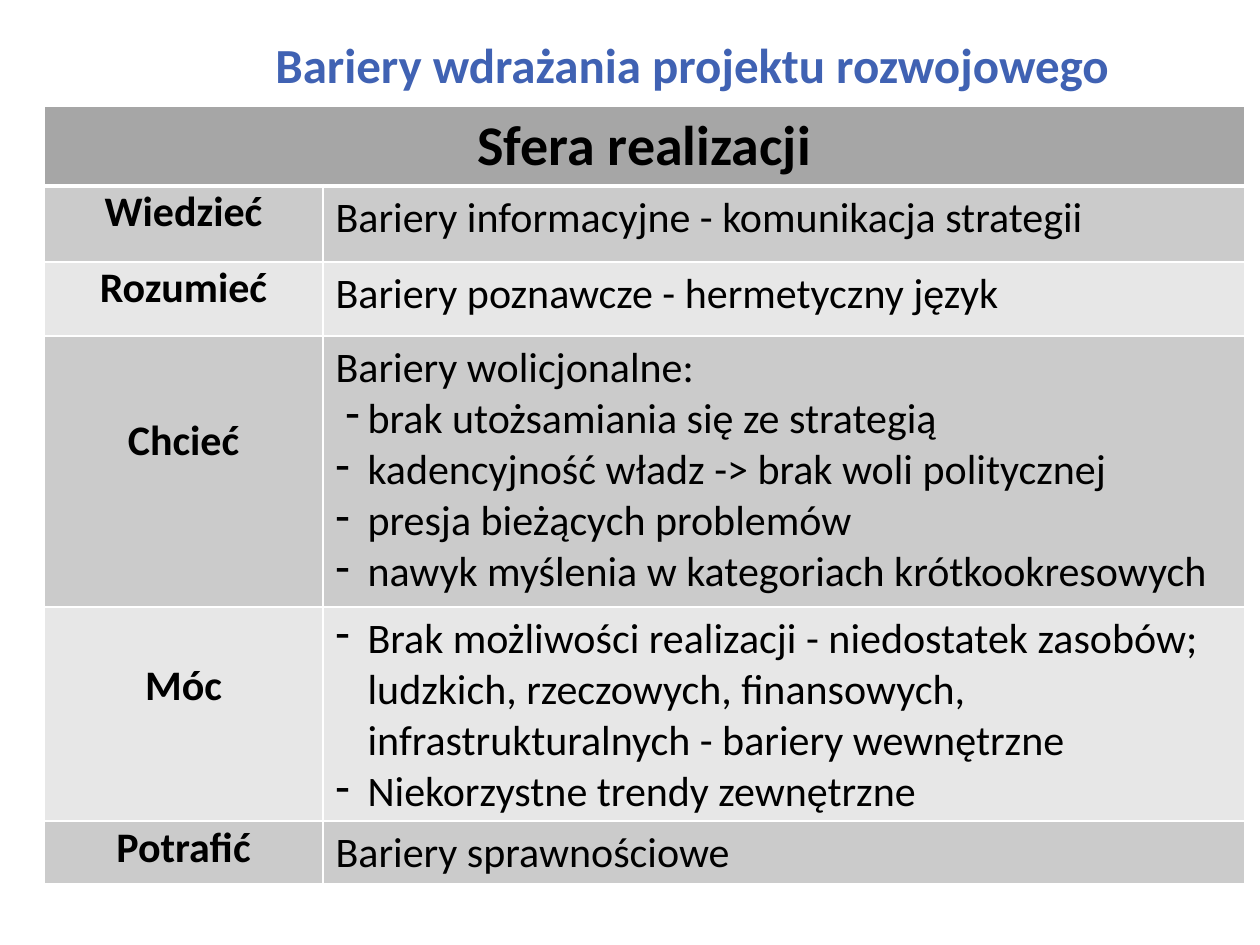
from pptx import Presentation
from pptx.dml.color import RGBColor
from pptx.enum.text import MSO_ANCHOR, PP_ALIGN
from pptx.oxml import parse_xml
from pptx.oxml.ns import nsdecls
from pptx.util import Emu, Pt

LABEL_LINE = 15  # points, fixed line pitch of the left column
HEADER_FILL, BAND_FILLS = "A6A6A6", ("CBCBCB", "E7E7E7")


def px(value):
    return Emu(round(value * 914400 / 126))


def color(value):
    return RGBColor.from_string(value)


def apply(target, values):
    for name, value in values.items():
        setattr(target, name, value)


class SlideBuilder:
    font = "Calibri"
    ink = "000000"
    grid = "FFFFFF"
    dash_indent = 32

    def __init__(self, slide):
        self.slide = slide

    def add_text(self, paragraph, text, size, bold=False, ink=None, **layout):
        apply(paragraph, layout)
        run = paragraph.add_run()
        run.text = text
        apply(run.font, dict(name=self.font, size=Pt(size), bold=bold))
        run.font.color.rgb = color(ink or self.ink)

    def dash(self, paragraph, first_offset):
        """Turn a paragraph into a dash item with a hanging indent."""
        props = paragraph._p.get_or_add_pPr()
        props.set("marL", str(px(self.dash_indent)))
        props.set("indent", str(px(first_offset - self.dash_indent)))
        props.append(parse_xml(f'<a:buChar {nsdecls("a")} char="-"/>'))

    def title(self, text, left, top, width, height):
        frame = self.slide.shapes.add_textbox(
            px(left), px(top), px(width), px(height)).text_frame
        apply(frame, dict(word_wrap=True, vertical_anchor=MSO_ANCHOR.TOP,
                          margin_top=px(9)))
        self.add_text(frame.paragraphs[0], text, 28, True, "4062B3")

    def table(self, left, top, columns, rows):
        table = self.slide.shapes.add_table(
            len(rows), len(columns), px(left), px(top),
            px(sum(columns)), px(sum(rows))).table
        table.horz_banding = False
        for column, width in zip(table.columns, columns):
            column.width = px(width)
        for row, height in zip(table.rows, rows):
            row.height = px(height)
        return table

    def style_cell(self, cell, fill, top=1, bottom=1):
        cell.fill.solid()
        cell.fill.fore_color.rgb = color(fill)
        props = cell._tc.get_or_add_tcPr()
        borders = dict(lnL=1, lnR=1, lnT=top, lnB=bottom)
        for place, (side, points) in enumerate(borders.items()):
            props.insert(place, parse_xml(
                f'<a:{side} {nsdecls("a")} w="{Pt(points)}"><a:solidFill>'
                f'<a:srgbClr val="{self.grid}"/></a:solidFill></a:{side}>'))

    def label(self, cell, text, lines_above):
        apply(cell, dict(margin_left=px(9), margin_right=px(9), margin_bottom=0,
                         margin_top=Pt(LABEL_LINE * lines_above)))
        self.add_text(cell.text_frame.paragraphs[0], text, 24, True,
                      alignment=PP_ALIGN.CENTER, line_spacing=Pt(LABEL_LINE))

    def barriers(self, cell, items):
        """Items are (text, dash offset); an offset of None means no dash."""
        frame = cell.text_frame
        for number, (text, offset) in enumerate(items):
            paragraph = frame.add_paragraph() if number else frame.paragraphs[0]
            if offset is not None:
                self.dash(paragraph, offset)
            self.add_text(paragraph, text, 24)


# Label, lines left free above it, barriers
SPHERES = [
    ("Wiedzieć", 1, [("Bariery informacyjne - komunikacja strategii", None)]),
    ("Rozumieć", 1, [("Bariery poznawcze - hermetyczny język", None)]),
    ("Chcieć", 4, [
        ("Bariery wolicjonalne:", None),
        ("brak utożsamiania się ze strategią", 10),
        ("kadencyjność władz -> brak woli politycznej", 0),
        ("presja bieżących problemów", 0),
        ("nawyk myślenia w kategoriach krótkookresowych", 0),
    ]),
    ("Móc", 3, [
        ("Brak możliwości realizacji - niedostatek zasobów; ludzkich, "
         "rzeczowych, finansowych, infrastrukturalnych - bariery wewnętrzne", 0),
        ("Niekorzystne trendy zewnętrzne", 0),
    ]),
    ("Potrafić", 1, [("Bariery sprawnościowe", None)]),
]


def main():
    deck = Presentation()
    apply(deck, dict(slide_width=px(1260), slide_height=px(945)))
    builder = SlideBuilder(deck.slides.add_slide(deck.slide_layouts[6]))

    # Title
    builder.title("Bariery wdrażania projektu rozwojowego", 263, 26, 934, 118)

    # Table header across both columns
    table = builder.table(44, 106, [279, 922], [72, 76, 74, 271, 210, 62])
    header = table.cell(0, 0)
    header.merge(table.cell(0, 1))
    for column in range(2):
        builder.style_cell(table.cell(0, column), HEADER_FILL, bottom=3)
    builder.add_text(header.text_frame.paragraphs[0], "Sfera realizacji", 32, True,
                     alignment=PP_ALIGN.CENTER)

    # One row per sphere
    for row, (name, lines_above, items) in enumerate(SPHERES, start=1):
        label_cell, barrier_cell = table.cell(row, 0), table.cell(row, 1)
        for cell in (label_cell, barrier_cell):
            builder.style_cell(cell, BAND_FILLS[(row - 1) % 2],
                               top=3 if row == 1 else 1)
        builder.label(label_cell, name, lines_above)
        builder.barriers(barrier_cell, items)

    deck.save("out.pptx")


if __name__ == "__main__":
    main()
